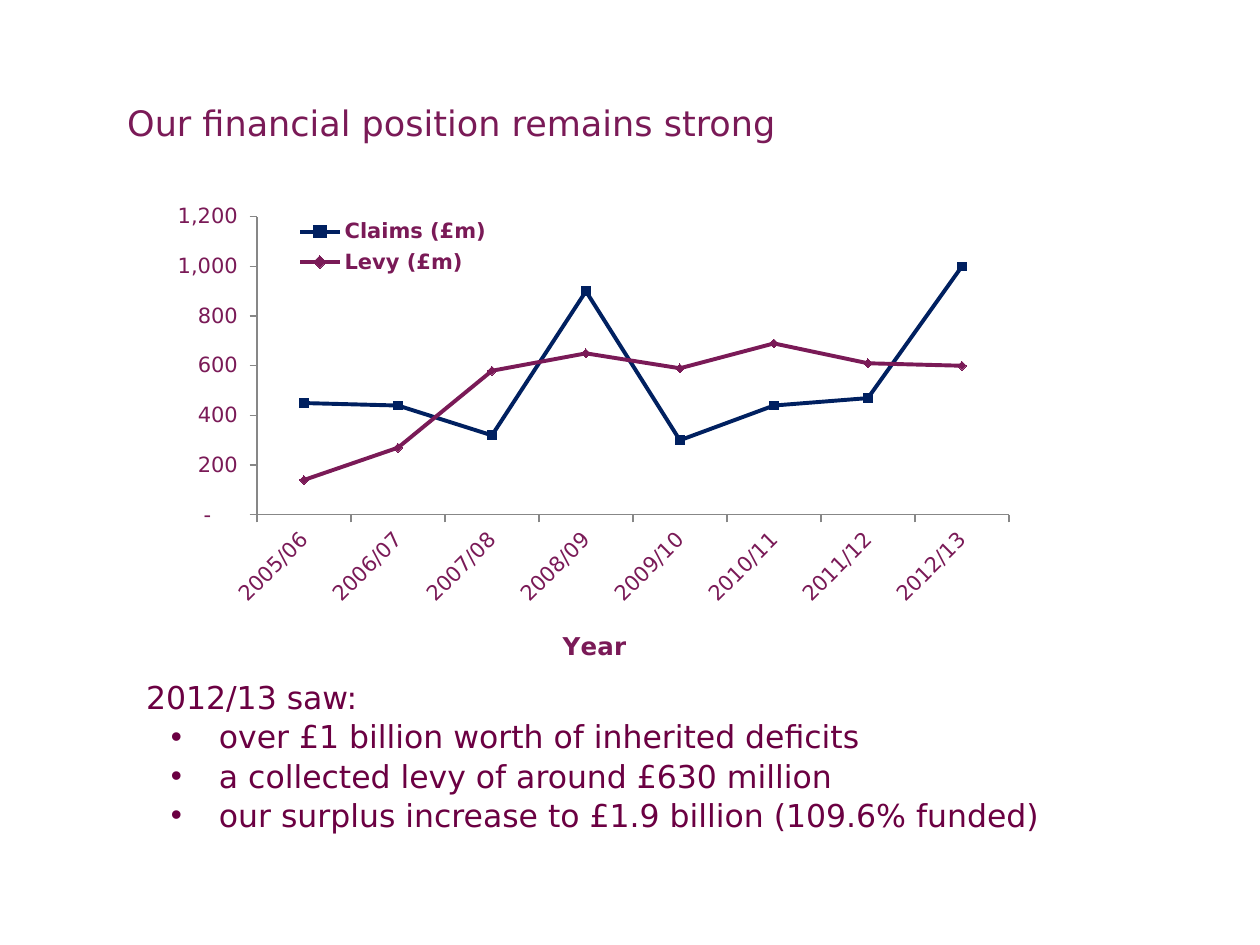
import pptx
import pptx.chart.data
import pptx.dml.color
import pptx.enum.chart
import pptx.enum.text
import pptx.oxml
import pptx.oxml.ns
import pptx.util
from pptx.util import Cm

FONT = "DejaVu Sans"
COLORS = {"plum": "7A1A57", "wine": "6B0042", "navy": "002060", "axis": "878787"}

TITLE = "Our financial position remains strong"
INTRO = "2012/13 saw:"
POINTS = [
    "over £1 billion worth of inherited deficits",
    "a collected levy of around £630 million",
    "our surplus increase to £1.9 billion (109.6% funded)",
]
YEARS = ["2005/06", "2006/07", "2007/08", "2008/09",
         "2009/10", "2010/11", "2011/12", "2012/13"]
SERIES = [
    ("Claims (£m)", [450, 440, 320, 900, 300, 440, 470, 1000], "navy", "SQUARE"),
    ("Levy (£m)", [140, 270, 580, 650, 590, 690, 610, 600], "plum", "DIAMOND"),
]
NUMBER_FORMAT = '_-* #,##0_-;\\-* #,##0_-;_-* "-"??_-;_-@_'

TITLE_BOX = (2.31, 1.55, 19.33, 1.85)
BODY_BOX = (2.69, 13.51, 19.2, 4.62)
CHART_BOX = (3.1, 3.94, 17.6, 9.8)
PLOT_BOX = (2.08, 0.43, 15.16, 6.01)
LEGEND_BOX = (2.85, 0.37, 3.95, 1.33)
AXIS_TITLE_POSITION = (8.15, 8.65)


def rgb(name):
    return pptx.dml.color.RGBColor.from_string(COLORS[name])


def style_font(font, size, color, bold=False):
    font.name = FONT
    font.size = pptx.util.Pt(size)
    font.bold = bold
    font.color.rgb = rgb(color)


def place(shape, box):
    shape.left, shape.top, shape.width, shape.height = map(Cm, box)


def add_run(paragraph, text, size, color):
    run = paragraph.add_run()
    run.text = text
    style_font(run.font, size, color)


def set_layout(element, index, box, inner=False):
    for old in element.findall(pptx.oxml.ns.qn("c:layout")):
        element.remove(old)
    target = '<c:layoutTarget val="inner"/>' if inner else ""
    keys = "xywh"[:len(box)]
    modes = "".join(f'<c:{key}Mode val="edge"/>' for key in keys[:2])
    sizes = "".join(f'<c:{key} val="{length / CHART_BOX[2 + i % 2]:.4f}"/>'
                    for i, (key, length) in enumerate(zip(keys, box)))
    element.insert(index, pptx.oxml.parse_xml(
        f'<c:layout {pptx.oxml.ns.nsdecls("c")}><c:manualLayout>'
        f'{target}{modes}{sizes}</c:manualLayout></c:layout>'))


def fill_title(shape):
    place(shape, TITLE_BOX)
    frame = shape.text_frame
    frame.auto_size = pptx.enum.text.MSO_AUTO_SIZE.NONE
    frame.vertical_anchor = pptx.enum.text.MSO_ANCHOR.MIDDLE
    paragraph = frame.paragraphs[0]
    paragraph.alignment = pptx.enum.text.PP_ALIGN.LEFT
    add_run(paragraph, TITLE, 20, "plum")


def fill_body(shape):
    place(shape, BODY_BOX)
    frame = shape.text_frame
    frame.auto_size = pptx.enum.text.MSO_AUTO_SIZE.NONE
    for i, text in enumerate([INTRO, *POINTS]):
        paragraph = frame.add_paragraph() if i else frame.paragraphs[0]
        paragraph.space_before = pptx.util.Pt(0)
        paragraph.line_spacing = 1.04
        properties = paragraph._p.get_or_add_pPr()
        properties.set("marL", str(Cm(1.47) if i else 0))
        properties.set("indent", str(Cm(-0.97) if i else 0))
        bullet = 'buChar char="•"' if i else "buNone"
        properties.append(pptx.oxml.parse_xml(
            f'<a:{bullet} {pptx.oxml.ns.nsdecls("a")}/>'))
        add_run(paragraph, text, 18, "wine")


def style_axis(axis):
    axis.has_major_gridlines = False
    axis.major_tick_mark = pptx.enum.chart.XL_TICK_MARK.OUTSIDE
    axis.format.line.color.rgb = rgb("axis")
    style_font(axis.tick_labels.font, 12, "plum")


def add_line_chart(slide):
    data = pptx.chart.data.CategoryChartData()
    data.categories = YEARS
    for name, values, *_ in SERIES:
        data.add_series(name, values)
    chart = slide.shapes.add_chart(
        pptx.enum.chart.XL_CHART_TYPE.LINE_MARKERS, *map(Cm, CHART_BOX), data).chart
    chart.has_title = False
    style_font(chart.font, 12, "plum")
    chart.plots[0].vary_by_categories = False
    set_layout(chart._chartSpace.chart.plotArea, 0, PLOT_BOX, inner=True)

    for series, (_, _, color, marker) in zip(chart.plots[0].series, SERIES):
        series.smooth = False
        series.format.line.color.rgb = rgb(color)
        series.format.line.width = pptx.util.Pt(2.25)
        series.marker.style = pptx.enum.chart.XL_MARKER_STYLE[marker]
        series.marker.size = 5
        series.marker.format.fill.solid()
        series.marker.format.fill.fore_color.rgb = rgb(color)
        series.marker.format.line.color.rgb = rgb(color)

    years, amounts = chart.category_axis, chart.value_axis
    style_axis(years)
    style_axis(amounts)
    years._element.txPr.bodyPr.set("rot", "-2700000")
    amounts.minimum_scale, amounts.maximum_scale, amounts.major_unit = 0, 1200, 200
    amounts.tick_labels.number_format = NUMBER_FORMAT
    amounts.tick_labels.number_format_is_linked = False
    run = years.axis_title.text_frame.paragraphs[0].add_run()
    run.text = "Year"
    style_font(run.font, 14, "plum", bold=True)
    set_layout(years.axis_title._element, 1, AXIS_TITLE_POSITION)

    chart.has_legend = True
    legend = chart.legend
    legend.position = pptx.enum.chart.XL_LEGEND_POSITION.LEFT
    legend.include_in_layout = True
    style_font(legend.font, 12, "plum", bold=True)
    set_layout(legend._element, 1, LEGEND_BOX)


def main():
    """Build the financial position slide with its chart and summary."""
    presentation = pptx.Presentation()
    presentation.slide_width, presentation.slide_height = Cm(25.4), Cm(19.05)
    slide = presentation.slides.add_slide(presentation.slide_layouts[1])
    fill_title(slide.shapes.title)
    fill_body(slide.placeholders[1])
    add_line_chart(slide)
    presentation.save("out.pptx")


if __name__ == "__main__":
    main()
